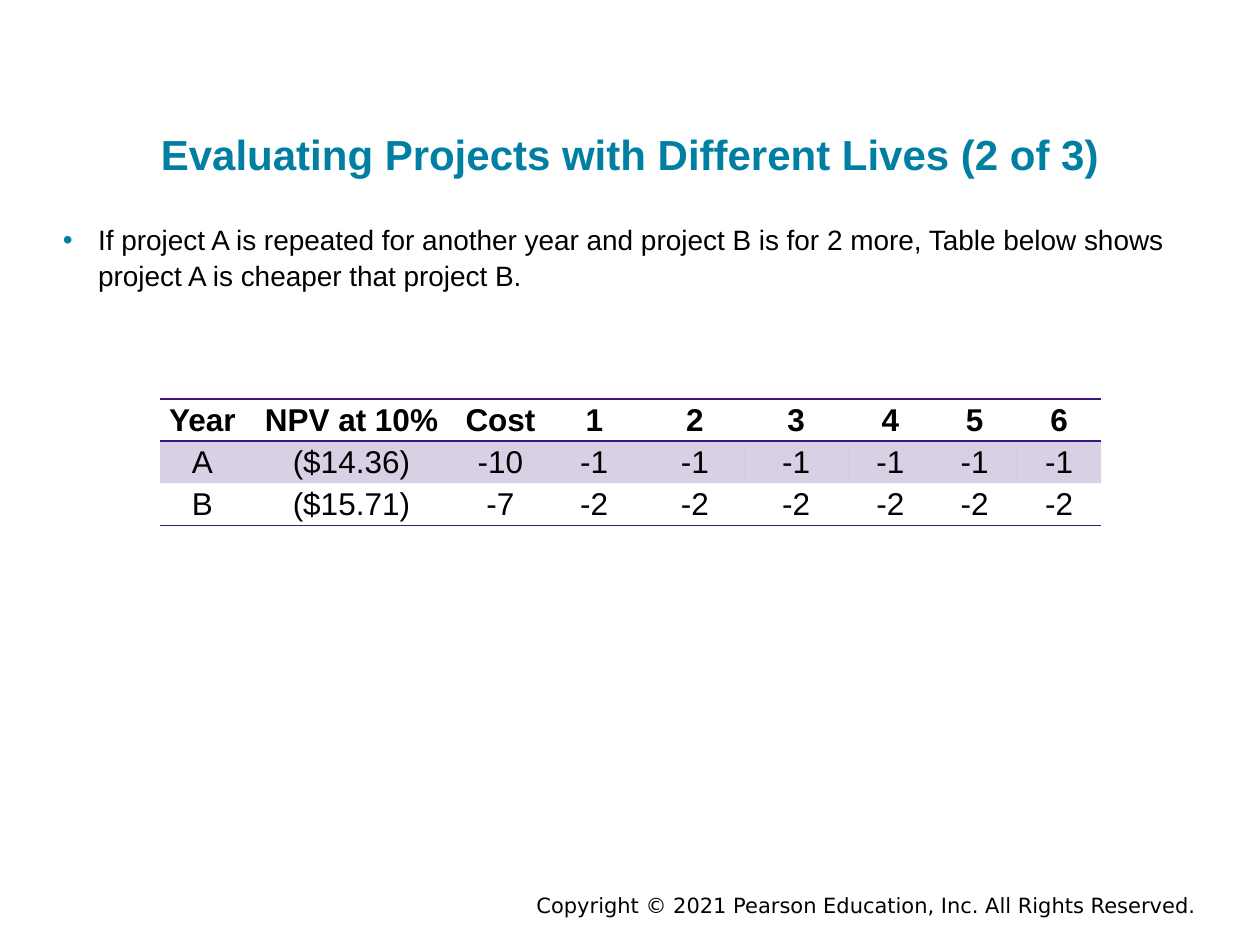
"""Build the slide that compares two projects with different lives."""
from dataclasses import dataclass

from lxml.etree import SubElement
from pptx import Presentation
from pptx.dml.color import RGBColor
from pptx.enum.text import MSO_ANCHOR, PP_ALIGN
from pptx.oxml import parse_xml
from pptx.oxml.ns import nsdecls, qn
from pptx.slide import Slide
from pptx.table import _Cell
from pptx.text.text import _Paragraph
from pptx.util import Cm, Pt


@dataclass(frozen=True)
class Theme:
    heading: str = "007FA3"
    ink: str = "000000"
    accent: str = "3C1581"
    face: str = "Arial"
    footer_face: str = "DejaVu Sans"
    title_size: int = 24
    body_size: int = 16
    table_size: int = 18
    footer_size: int = 12
    rule_width: int = 1
    band_opacity: int = 20


@dataclass(frozen=True)
class Passage:
    text: str
    box: tuple[float, float, float, float]
    size: int
    color: str
    face: str
    align: PP_ALIGN = PP_ALIGN.LEFT
    anchor: MSO_ANCHOR = MSO_ANCHOR.TOP
    inset: tuple[float, float] = (0, 0)
    bold: bool = False
    bullet: bool = False
    line_spacing: float = 1.0


@dataclass(frozen=True)
class ProjectRow:
    values: tuple[str, ...]
    bold: bool = False
    banded: bool = False
    rules: tuple[str, ...] = ()


THEME = Theme()
NO_STYLE = "{2D5ABB26-0587-4C30-8999-92F81FD0307C}"
TABLE_LEFT, TABLE_TOP, ROW_HEIGHT = 3.23, 8.04, 0.85
COLUMN_WIDTHS = (1.7, 4.31, 1.7, 2.08, 1.98, 2.1, 1.7, 1.7, 1.7)

PASSAGES = (
    Passage("Copyright © 2021 Pearson Education, Inc. All Rights Reserved.",
            (9.96, 17.86, 14.4, 0.76), THEME.footer_size, THEME.ink, THEME.footer_face,
            align=PP_ALIGN.RIGHT, inset=(0.25, 0.13)),
    Passage("Evaluating Projects with Different Lives (2 of 3)",
            (1.27, 0.61, 22.86, 3), THEME.title_size, THEME.heading, THEME.face,
            align=PP_ALIGN.CENTER, anchor=MSO_ANCHOR.BOTTOM, bold=True),
    Passage("If project A is repeated for another year and project B is for 2 more, "
            "Table below shows project A is cheaper that project B.",
            (1.27, 4.45, 22.86, 2.34), THEME.body_size, THEME.ink, THEME.face,
            bullet=True, line_spacing=1.06),
)
PROJECT_ROWS = (
    ProjectRow(("Year", "NPV at 10%", "Cost", *map(str, range(1, 7))),
               bold=True, rules=("lnT", "lnB")),
    ProjectRow(("A", "($14.36)", "-10", *["-1"] * 6), banded=True),
    ProjectRow(("B", "($15.71)", "-7", *["-2"] * 6), rules=("lnB",)),
)


def set_font(paragraph: _Paragraph, size: int, color: str, face: str, bold: bool) -> None:
    font = paragraph.runs[0].font
    for attribute, value in {"size": Pt(size), "name": face, "bold": bold}.items():
        setattr(font, attribute, value)
    font.color.rgb = RGBColor.from_string(color)


def add_bullet(paragraph: _Paragraph) -> None:
    properties = paragraph._p.get_or_add_pPr()
    properties.set("marL", str(Cm(0.71)))
    properties.set("indent", str(-Cm(0.71)))
    bullet_color = SubElement(properties, qn("a:buClr"))
    SubElement(bullet_color, qn("a:srgbClr"), val=THEME.heading)
    SubElement(properties, qn("a:buFont"), typeface=THEME.face)
    SubElement(properties, qn("a:buChar"), char="•")


def add_passage(slide: Slide, passage: Passage) -> None:
    frame = slide.shapes.add_textbox(*map(Cm, passage.box)).text_frame
    side, edge = map(Cm, passage.inset)
    layout = {"word_wrap": True, "vertical_anchor": passage.anchor,
              "margin_left": side, "margin_right": side,
              "margin_top": edge, "margin_bottom": edge}
    for attribute, value in layout.items():
        setattr(frame, attribute, value)
    paragraph = frame.paragraphs[0]
    paragraph.text = passage.text
    paragraph.alignment = passage.align
    paragraph.line_spacing = passage.line_spacing
    if passage.bullet:
        add_bullet(paragraph)
    set_font(paragraph, passage.size, passage.color, passage.face, passage.bold)


def fill_cell(cell: _Cell, text: str, row: ProjectRow) -> None:
    layout = {"text": text, "vertical_anchor": MSO_ANCHOR.MIDDLE, "margin_left": Cm(0.03),
              "margin_right": Cm(0.03), "margin_top": Cm(0.03), "margin_bottom": 0}
    for attribute, value in layout.items():
        setattr(cell, attribute, value)
    paragraph = cell.text_frame.paragraphs[0]
    paragraph.alignment = PP_ALIGN.CENTER
    set_font(paragraph, THEME.table_size, THEME.ink, THEME.face, row.bold)
    properties = cell._tc.get_or_add_tcPr()
    if row.banded:
        cell.fill.solid()
        cell.fill.fore_color.rgb = RGBColor.from_string(THEME.accent)
        tint = properties.find(f".//{qn('a:srgbClr')}")
        SubElement(tint, qn("a:alpha"), val=str(THEME.band_opacity * 1000))
    else:
        cell.fill.background()
    for position, side in enumerate(row.rules):
        properties.insert(position, parse_xml(
            f'<a:{side} {nsdecls("a")} w="{Pt(THEME.rule_width)}"><a:solidFill>'
            f'<a:srgbClr val="{THEME.accent}"/></a:solidFill></a:{side}>'))


def add_project_table(slide: Slide, rows: tuple[ProjectRow, ...]) -> None:
    table = slide.shapes.add_table(
        len(rows), len(COLUMN_WIDTHS), Cm(TABLE_LEFT), Cm(TABLE_TOP),
        Cm(sum(COLUMN_WIDTHS)), Cm(ROW_HEIGHT * len(rows))).table
    table.horz_banding = False
    table._tbl.tblPr.find(qn("a:tableStyleId")).text = NO_STYLE
    for column, width in zip(table.columns, COLUMN_WIDTHS):
        column.width = Cm(width)
    for table_row, row in zip(table.rows, rows):
        table_row.height = Cm(ROW_HEIGHT)
        for cell, text in zip(table_row.cells, row.values):
            fill_cell(cell, text, row)


def main() -> None:
    deck = Presentation()
    deck.slide_width, deck.slide_height = Cm(25.4), Cm(19.05)
    slide = deck.slides.add_slide(deck.slide_layouts[6])
    for passage in PASSAGES:
        add_passage(slide, passage)
    add_project_table(slide, PROJECT_ROWS)
    deck.save("out.pptx")


if __name__ == "__main__":
    main()
